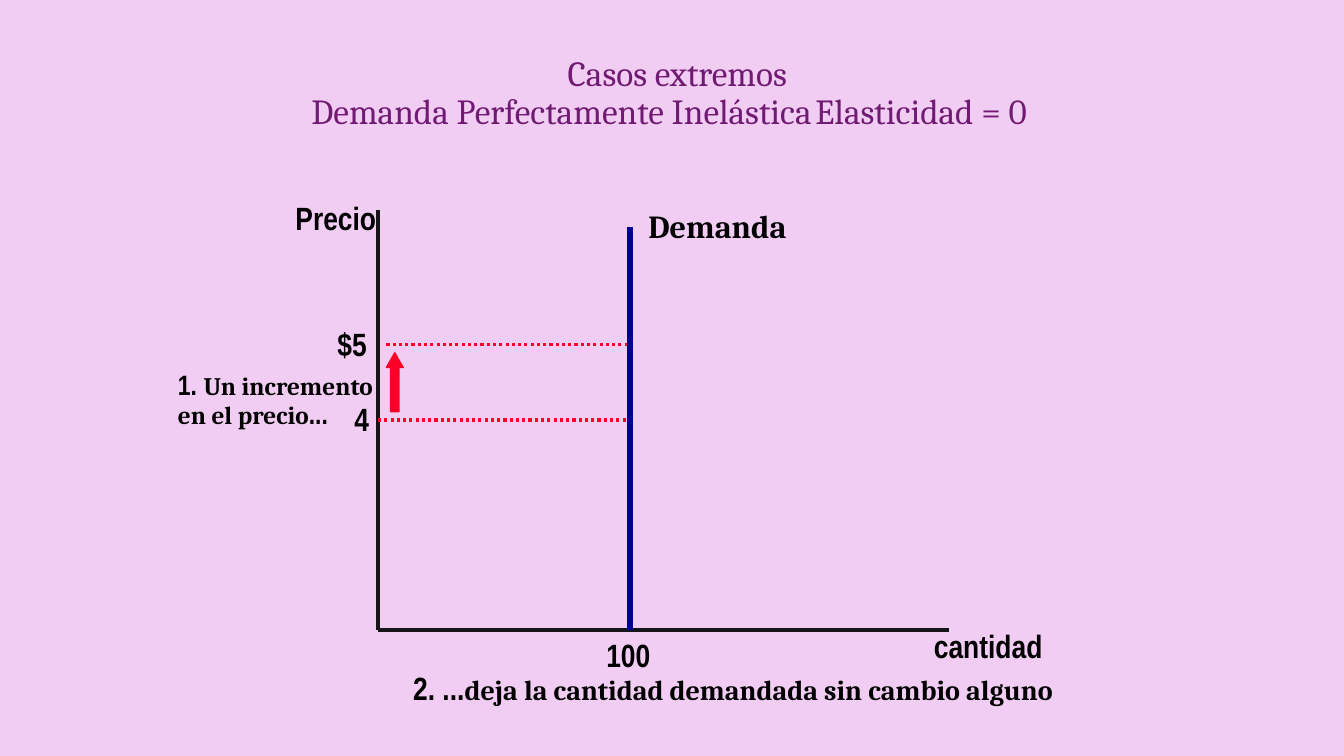
from lxml.etree import SubElement
from pptx import Presentation
from pptx.dml.color import RGBColor
from pptx.enum.dml import MSO_LINE
from pptx.enum.shapes import MSO_CONNECTOR as CONN, MSO_SHAPE as SHAPE
from pptx.enum.text import MSO_ANCHOR as ANCHOR, MSO_AUTO_SIZE as AUTO, PP_ALIGN as ALIGN
from pptx.oxml.ns import qn
from pptx.util import Emu, Pt


def rgb(value):
    return RGBColor.from_string(value)


def px(n):
    return Emu(n * 9525)


def assign(obj, **values):
    for name, value in values.items():
        setattr(obj, name, value)


class Deck:
    """Slide builder holding the style and the current slide."""

    NARROW, SERIF = "Arial Narrow", "Cambria"
    INK, AXIS, RED, BLUE, PURPLE = "000000", "151517", "FC0128", "000099", "711A73"
    BACK = "F2CDF3"

    def __init__(self, width, height):
        self.prs = Presentation()
        assign(self.prs, slide_width=px(width), slide_height=px(height))
        self.s = self.prs.slides.add_slide(self.prs.slide_layouts[5])
        fill = self.s.background.fill
        fill.solid()
        fill.fore_color.rgb = rgb(self.BACK)

    def run(self, p, text, size, font, color=INK, bold=True):
        r = p.add_run()
        r.text = text
        assign(r.font, size=Pt(size), name=font, bold=bold)
        r.font.color.rgb = rgb(color)

    def title(self, x, y, w, h, lines):
        sp = self.s.shapes.title
        assign(sp, left=px(x), top=px(y), width=px(w), height=px(h))
        tf = sp.text_frame
        assign(tf, word_wrap=True, auto_size=AUTO.NONE, vertical_anchor=ANCHOR.MIDDLE)
        for i, (text, indent, tab) in enumerate(lines):
            p = tf.add_paragraph() if i else tf.paragraphs[0]
            assign(p, alignment=ALIGN.LEFT, line_spacing=0.9, space_before=Pt(0))
            pPr = p._p.get_or_add_pPr()
            pPr.set("marL", str(px(indent)))
            pPr.set("indent", "0")
            if tab:
                tabs = SubElement(pPr, qn("a:tabLst"))
                SubElement(tabs, qn("a:tab"), pos=str(px(tab)), algn="l")
            self.run(p, text, 25.2, self.SERIF, self.PURPLE, False)

    def text(self, x, y, w, h, *lines, wrap=False, spacing=1.0):
        tf = self.s.shapes.add_textbox(px(x), px(y), px(w), px(h)).text_frame
        assign(tf, word_wrap=wrap, vertical_anchor=ANCHOR.MIDDLE if wrap else ANCHOR.TOP,
               auto_size=AUTO.NONE if wrap else AUTO.SHAPE_TO_FIT_TEXT)
        for i, runs in enumerate(lines):
            p = tf.add_paragraph() if i else tf.paragraphs[0]
            p.line_spacing = spacing
            for text, size, font in runs:
                self.run(p, text, size, font)

    def line(self, x1, y1, x2, y2, color, width=2.25, dash=None):
        c = self.s.shapes.add_connector(CONN.STRAIGHT, px(x1), px(y1), px(x2), px(y2))
        c.line.color.rgb = rgb(color)
        assign(c.line, width=Pt(width), dash_style=dash)
        SubElement(c._element.spPr, qn("a:effectLst"))

    def up_arrow(self, x, y, w, h, color, head):
        sp = self.s.shapes.add_shape(SHAPE.UP_ARROW, px(x), px(y), px(w), px(h))
        sp.shadow.inherit = False
        sp.adjustments[0], sp.adjustments[1] = 0.5, head
        sp.fill.solid()
        sp.fill.fore_color.rgb = sp.line.color.rgb = rgb(color)
        sp.line.width = Pt(1)


def main():
    d = Deck(1280, 720)
    axis_x, demand_x, base_y = 360, 600, 600
    d.title(287, 48, 860, 83, [
        ("Casos extremos", 244, None),
        ("Demanda Perfectamente Inelástica\tElasticidad = 0", 0, 504),
    ])

    d.line(axis_x, 200, axis_x, base_y, d.AXIS)
    d.line(axis_x, base_y, 904, base_y, d.AXIS)
    for start, y in ((axis_x, 400), (368, 328)):
        d.line(start, y, demand_x, y, d.RED, dash=MSO_LINE.ROUND_DOT)
    d.line(demand_x, base_y, demand_x, 216, d.BLUE, 4.5)

    for label, x, y, w, font in (
        ("cantidad", 880, 592, 123, d.NARROW),
        ("Precio", 272, 184, 96, d.NARROW),
        ("4", 328, 376, 34, d.NARROW),
        ("$5", 312, 304, 47, d.NARROW),
        ("Demanda", 608, 192, 156, d.SERIF),
        ("100", 568, 600, 61, d.NARROW),
    ):
        d.text(x, y, w, 46, [(label, 23, font)])

    d.text(384, 632, 646, 47, [
        ("2. ...", 23, d.NARROW),
        ("deja la cantidad demandada sin cambio alguno", 20, d.SERIF),
    ])
    d.text(160, 323, 215, 119,
           [("1. ", 20, d.NARROW), ("Un incremento", 18, d.SERIF)],
           [("en el precio", 18, d.SERIF), ("...", 20, d.NARROW)],
           wrap=True, spacing=0.85)
    d.up_arrow(368, 336, 16, 56, d.RED, 0.875)
    d.prs.save("out.pptx")


if __name__ == "__main__":
    main()
